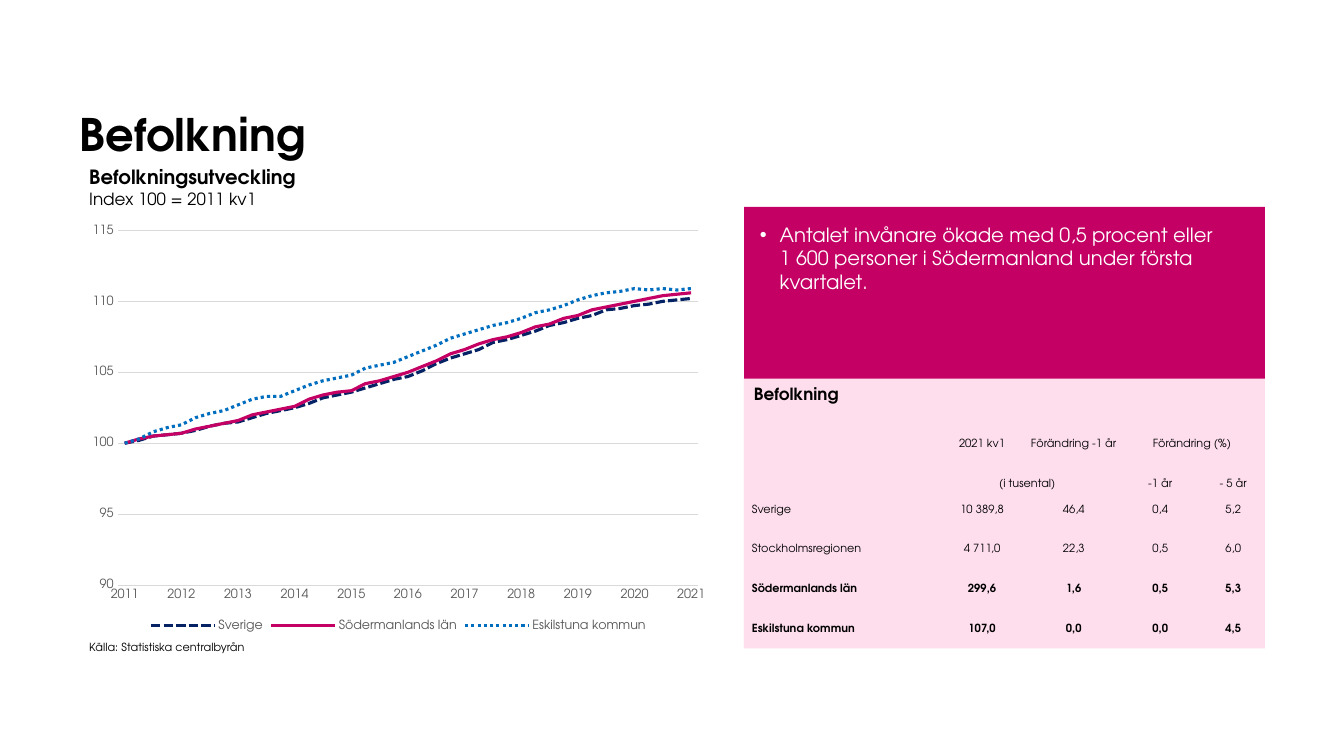
"""Build the population slide with its index chart and key figure table."""
from dataclasses import dataclass

from lxml import etree
from pptx import Presentation
from pptx import util as u
from pptx.chart.data import CategoryChartData
from pptx.dml.color import RGBColor
from pptx.enum import chart as ch, dml, shapes, text
from pptx.oxml import ns

FONT = "TeX Gyre Adventor"
COLORS = {
    "black": "000000", "white": "FFFFFF", "grey": "595959", "grid": "D9D9D9",
    "magenta": "C40064", "pink": "FEDEED", "navy": "052364", "blue": "006EBF",
}
LEFT, PANEL_LEFT, PANEL_WIDTH = 2.0, 18.75, 13.13
NO_STYLE = "{2D5ABB26-0587-4C30-8999-92F81FD0307C}"


@dataclass
class Label:
    """A text box whose lines are (text, size, bold) triples."""
    box: tuple
    lines: list
    wrap: bool = False


@dataclass
class Line:
    """One line of the chart."""
    name: str
    color: str
    dash: object
    values: list


@dataclass
class Row:
    """One row of the table, with an optional merged column pair."""
    cells: list
    merge: tuple = ()
    header: bool = False
    bold: bool = False


LABELS = [
    Label((LEFT, 16.0, 4.52, 0.61), [("Källa: Statistiska centralbyrån", 8, False)]),
    Label((PANEL_LEFT, 9.55, 2.67, 0.76), [("Befolkning", 12, True)]),
    Label((LEFT, 4.04, 10.11, 1.37),
          [("Befolkningsutveckling", 14, True), ("Index 100 = 2011 kv1", 12, False)], True),
]
LINES = [
    Line("Sverige", "navy", dml.MSO_LINE.SQUARE_DOT, [
        100, 100.2, 100.5, 100.6, 100.7, 100.9, 101.2, 101.4, 101.5, 101.8, 102.1,
        102.3, 102.5, 102.8, 103.2, 103.4, 103.6, 103.9, 104.2, 104.5, 104.7, 105.1,
        105.6, 106, 106.3, 106.6, 107.1, 107.3, 107.6, 107.9, 108.3, 108.5, 108.8,
        109, 109.4, 109.5, 109.7, 109.8, 110, 110.1, 110.2]),
    Line("Södermanlands län", "magenta", dml.MSO_LINE.SOLID, [
        100, 100.3, 100.5, 100.6, 100.7, 101, 101.2, 101.4, 101.6, 102, 102.2,
        102.4, 102.6, 103.1, 103.4, 103.6, 103.7, 104.2, 104.4, 104.7, 105, 105.4,
        105.8, 106.3, 106.6, 107, 107.3, 107.5, 107.8, 108.2, 108.4, 108.8, 109,
        109.4, 109.6, 109.8, 110, 110.2, 110.4, 110.5, 110.6]),
    Line("Eskilstuna kommun", "blue", dml.MSO_LINE.ROUND_DOT, [
        100, 100.3, 100.8, 101.1, 101.3, 101.8, 102.1, 102.3, 102.7, 103.1, 103.3,
        103.3, 103.7, 104.1, 104.4, 104.6, 104.8, 105.3, 105.5, 105.7, 106.1, 106.5,
        106.9, 107.4, 107.7, 108, 108.3, 108.5, 108.8, 109.2, 109.4, 109.7, 110.1,
        110.4, 110.6, 110.7, 110.9, 110.8, 110.9, 110.8, 110.9]),
]
ROWS = [
    Row(["", "2021 kv1", "Förändring -1 år", "Förändring (%)", ""], (3, 4), header=True),
    Row(["", "(i tusental)", "", "-1 år", "- 5 år"], (1, 2), header=True),
    Row(["Sverige", "10 389,8", "46,4", "0,4", "5,2"]),
    Row(["Stockholmsregionen", "4 711,0", "22,3", "0,5", "6,0"]),
    Row(["Södermanlands län", "299,6", "1,6", "0,5", "5,3"], bold=True),
    Row(["Eskilstuna kommun", "107,0", "0,0", "0,0", "4,5"], bold=True),
]
COLUMN_WIDTHS = [4.83, 2.34, 2.28, 2.08, 1.6]


def rgb(name: str) -> RGBColor:
    """Return a named colour."""
    return RGBColor.from_string(COLORS[name])


def cm(box: tuple) -> list:
    """Convert a box in centimetres to lengths."""
    return [u.Cm(n) for n in box]


def place(sp, box: tuple) -> None:
    """Move and size a shape."""
    sp.left, sp.top, sp.width, sp.height = cm(box)


def style_font(font, size: float, color: str = "black", bold: bool = False) -> None:
    """Format a font."""
    font.name, font.size, font.bold = FONT, u.Pt(size), bold
    font.color.rgb = rgb(color)


def write(p, content: str, *, size: float, color: str = "black", bold: bool = False,
          align=text.PP_ALIGN.LEFT) -> None:
    """Add a formatted run to a paragraph, breaking at newlines."""
    p.alignment = align
    for i, line in enumerate(content.split("\n")):
        if i:
            p.add_line_break()
        r = p.add_run()
        r.text = line
        style_font(r.font, size, color, bold)


def set_margins(frame, left: float, top: float, right: float, bottom: float) -> None:
    """Set the inner margins of a text frame or cell."""
    frame.margin_left, frame.margin_top, frame.margin_right, frame.margin_bottom = cm(
        (left, top, right, bottom))


def add_label(s, label: Label) -> None:
    """Draw a text box."""
    tf = s.shapes.add_textbox(*cm(label.box)).text_frame
    tf.word_wrap = label.wrap
    p = tf.paragraphs[0]
    for i, (content, size, bold) in enumerate(label.lines):
        if i:
            p.add_line_break()
        write(p, content, size=size, bold=bold)


def fill_title(sp) -> None:
    """Fill the title placeholder."""
    place(sp, (LEFT, 0.94, 23.42, 3.1))
    tf = sp.text_frame
    tf.auto_size, tf.vertical_anchor = text.MSO_AUTO_SIZE.NONE, text.MSO_ANCHOR.BOTTOM
    set_margins(tf, 0, 0, 0, 0)
    write(tf.paragraphs[0], "Befolkning", size=32, bold=True)


def fill_body(sp) -> None:
    """Fill the body placeholder with its bullet."""
    place(sp, (PANEL_LEFT, 5.21, PANEL_WIDTH, 4.34))
    sp.fill.solid()
    sp.fill.fore_color.rgb = rgb("magenta")
    tf = sp.text_frame
    tf.auto_size, tf.vertical_anchor = text.MSO_AUTO_SIZE.NONE, text.MSO_ANCHOR.TOP
    set_margins(tf, 0.4, 0.4, 0.4, 0.4)
    p = tf.paragraphs[0]
    p.level, p.space_before = 4, u.Pt(0)
    pr = p._p.get_or_add_pPr()
    pr.set("marL", str(u.Cm(0.5)))
    pr.set("indent", str(-u.Cm(0.5)))
    etree.SubElement(pr, ns.qn("a:buFont")).set("typeface", "Arial")
    etree.SubElement(pr, ns.qn("a:buChar")).set("char", "•")
    write(p, "Antalet invånare ökade med 0,5 procent eller \n"
          "1 600 personer i Södermanland under första kvartalet.", size=14, color="white")


def add_table(s) -> None:
    """Draw the key figure table."""
    frame = s.shapes.add_table(len(ROWS), len(COLUMN_WIDTHS),
                               *cm((PANEL_LEFT, 10.34, PANEL_WIDTH, len(ROWS))))
    table = frame.table
    table.first_row = table.horz_banding = False
    table._tbl.tblPr.find(ns.qn("a:tableStyleId")).text = NO_STYLE
    for column, width in zip(table.columns, COLUMN_WIDTHS):
        column.width = u.Cm(width)
    for i, row in enumerate(ROWS):
        table.rows[i].height = u.Cm(1)
        for j, content in enumerate(row.cells):
            cell = table.cell(i, j)
            cell.fill.background()
            cell.vertical_anchor = text.MSO_ANCHOR.BOTTOM if row.header else text.MSO_ANCHOR.MIDDLE
            set_margins(cell, 0.02 if j else 0.2, 0.02, 0.02, 0)
            if content:
                write(cell.text_frame.paragraphs[0], content, size=8, bold=row.bold,
                      align=text.PP_ALIGN.CENTER if j else text.PP_ALIGN.LEFT)
        if row.merge:
            first, last = row.merge
            table.cell(i, first).merge(table.cell(i, last))


def add_chart(s) -> None:
    """Draw the population index chart."""
    data = CategoryChartData()
    data.categories = ["" if i % 4 else str(2011 + i // 4) for i in range(41)]
    for line in LINES:
        data.add_series(line.name, line.values)
    chart = s.shapes.add_chart(ch.XL_CHART_TYPE.LINE, *cm((LEFT, 5.49, 16.08, 10.52)), data).chart
    style_font(chart.font, 10)
    chart.has_title = False
    chart.has_legend = True
    chart.legend.position = ch.XL_LEGEND_POSITION.BOTTOM
    chart.legend.include_in_layout = False
    style_font(chart.legend.font, 9, "grey")
    plot = chart.plots[0]
    plot.vary_by_categories = False
    for series, line in zip(plot.series, LINES):
        series.smooth = False
        series.marker.style = ch.XL_MARKER_STYLE.NONE
        series.format.line.color.rgb = rgb(line.color)
        series.format.line.width = u.Pt(2.25)
        series.format.line.dash_style = line.dash
    years, index = chart.category_axis, chart.value_axis
    for axis in (years, index):
        axis.major_tick_mark = axis.minor_tick_mark = ch.XL_TICK_MARK.NONE
        style_font(axis.tick_labels.font, 9, "grey")
        axis._element.txPr.bodyPr.set("rot", "-60000000")
    index.minimum_scale, index.maximum_scale, index.major_unit = 90, 115, 5
    index.tick_labels.number_format, index.tick_labels.number_format_is_linked = "0", False
    index.format.line.fill.background()
    for rule in (years.format.line, index.major_gridlines.format.line):
        rule.color.rgb, rule.width = rgb("grid"), u.Pt(0.75)
    area = chart._chartSpace.chart.plotArea
    for old in area.findall(ns.qn("c:layout")):
        area.remove(old)
    layout = etree.Element(ns.qn("c:layout"))
    manual = etree.SubElement(layout, ns.qn("c:manualLayout"))
    for tag, value in [("layoutTarget", "inner"), ("xMode", "edge"), ("yMode", "edge"),
                       ("x", "0.06"), ("y", "0.03"), ("w", "0.91"), ("h", "0.85")]:
        etree.SubElement(manual, ns.qn(f"c:{tag}")).set("val", value)
    area.insert(0, layout)


def main() -> None:
    """Build and save the slide."""
    prs = Presentation()
    prs.slide_width, prs.slide_height = cm((33.87, 19.05))
    s = prs.slides.add_slide(prs.slide_layouts[1])
    fill_title(s.shapes.title)
    fill_body(s.placeholders[1])
    panel = s.shapes.add_shape(shapes.MSO_SHAPE.RECTANGLE,
                               *cm((PANEL_LEFT, 9.54, PANEL_WIDTH, 6.8)))
    panel.shadow.inherit = False
    panel.fill.solid()
    panel.fill.fore_color.rgb = rgb("pink")
    panel.line.fill.background()
    for label in LABELS:
        add_label(s, label)
    add_table(s)
    add_chart(s)
    prs.save("out.pptx")


if __name__ == "__main__":
    main()
